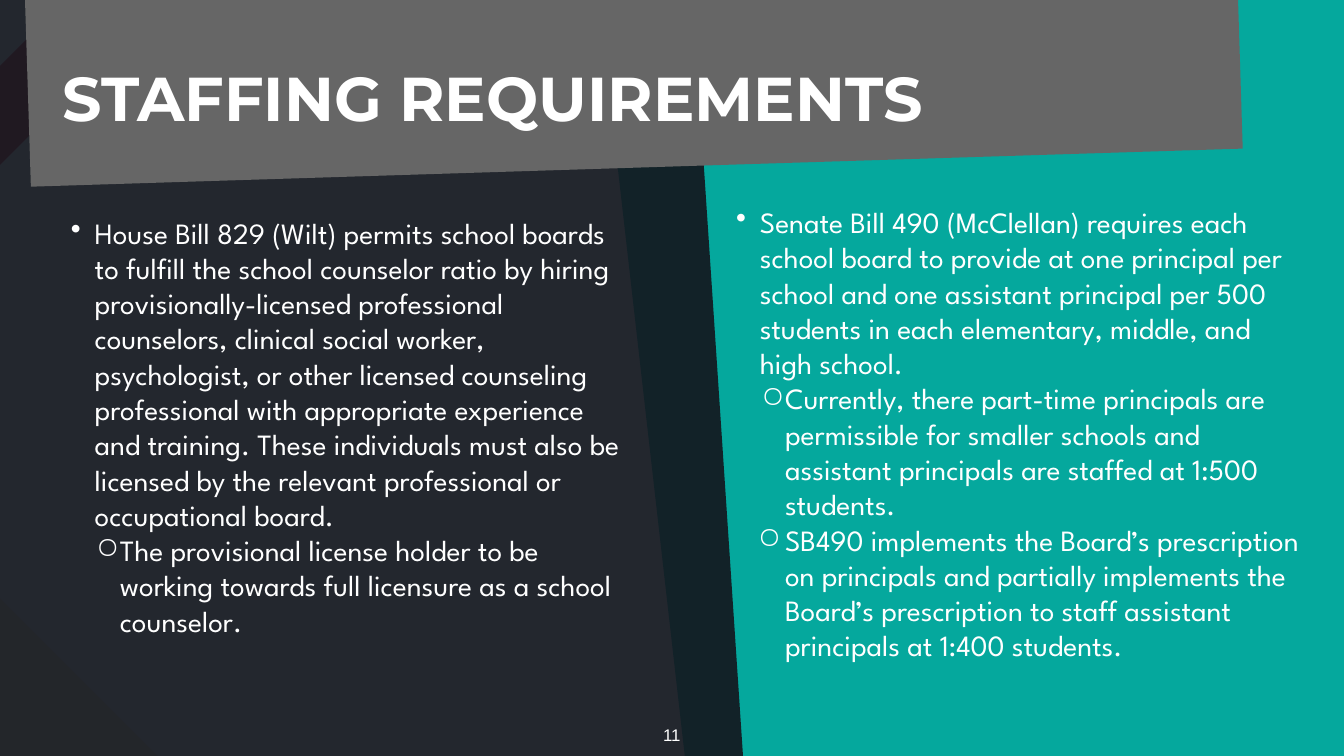
from dataclasses import dataclass

from lxml import etree
from pptx import Presentation
from pptx.dml.color import RGBColor
from pptx.enum.shapes import MSO_SHAPE
from pptx.enum.text import MSO_ANCHOR, MSO_AUTO_SIZE, PP_ALIGN
from pptx.oxml.ns import qn
from pptx.util import Inches, Pt

RECTANGLE = MSO_SHAPE.RECTANGLE
ROUNDED = MSO_SHAPE.ROUNDED_RECTANGLE
TOP, BOTTOM = MSO_ANCHOR.TOP, MSO_ANCHOR.BOTTOM
FIT_SHAPE = MSO_AUTO_SIZE.SHAPE_TO_FIT_TEXT
LEFT, CENTER = PP_ALIGN.LEFT, PP_ALIGN.CENTER
BULLETS = ("•", "○")


@dataclass(frozen=True)
class Theme:
    background: str = "EFEFEF"
    red: str = "C92D3A"
    cream: str = "ECE4B8"
    pale: str = "D5D5D5"
    teal: str = "05A89D"
    dark: str = "141820"
    gray: str = "666666"
    text: str = "FFFFFF"
    title_font: str = "Montserrat"
    body_font: str = "League Spartan"
    number_font: str = "Arial"
    title_size: float = 88.4
    body_size: float = 42
    number_size: float = 24


class SlideBuilder:
    def __init__(self, slide, theme):
        self.slide = slide
        self.theme = theme
        fill = slide.background.fill
        fill.solid()
        fill.fore_color.rgb = RGBColor.from_string(theme.background)

    def panel(self, box, rotation, color, opacity=100, kind=RECTANGLE):
        panel = self.slide.shapes.add_shape(kind, *map(Inches, box))
        panel.rotation = rotation
        panel.shadow.inherit = False
        panel.line.fill.background()
        panel.fill.solid()
        panel.fill.fore_color.rgb = RGBColor.from_string(color)
        if opacity < 100:
            tint = panel.fill._xPr.find(f".//{qn('a:srgbClr')}")
            etree.SubElement(tint, qn("a:alpha"), val=str(opacity * 1000))
        return panel

    def text_frame(self, box, inset, anchor=TOP):
        frame = self.slide.shapes.add_textbox(*map(Inches, box)).text_frame
        frame.word_wrap = True
        frame.vertical_anchor = anchor
        frame.margin_left = frame.margin_right = Inches(inset)
        frame.margin_top = frame.margin_bottom = Inches(inset)
        return frame

    def style(self, paragraph, font, size, bold=False, align=LEFT):
        paragraph.alignment = align
        paragraph.font.name = font
        paragraph.font.size = Pt(size)
        paragraph.font.bold = bold
        paragraph.font.color.rgb = RGBColor.from_string(self.theme.text)

    def title(self, box, wording):
        paragraph = self.text_frame(box, 0.06, BOTTOM).paragraphs[0]
        paragraph.text = wording
        paragraph.line_spacing = 0.8
        self.style(paragraph, self.theme.title_font, self.theme.title_size, bold=True)

    def bullet_list(self, box, items):
        frame = self.text_frame(box, 0.1)
        for index, (level, hanging, wording) in enumerate(items):
            paragraph = frame.add_paragraph() if index else frame.paragraphs[0]
            paragraph.text = wording
            paragraph.level = level
            self.style(paragraph, self.theme.body_font, self.theme.body_size)
            self.bullet(paragraph, level, hanging)

    def bullet(self, paragraph, level, hanging):
        properties = paragraph._p.get_or_add_pPr()
        properties.set("marL", str(Inches(0.5 * (level + 1))))
        properties.set("indent", str(-Inches(hanging)))
        color = etree.Element(qn("a:buClr"))
        etree.SubElement(color, qn("a:srgbClr"), val=self.theme.text)
        mark = etree.Element(qn("a:buChar"), char=BULLETS[level])
        properties.insert(0, color)
        properties.insert(1, mark)

    def page_number(self, box, number):
        frame = self.text_frame(box, 0.06)
        frame.auto_size = FIT_SHAPE
        frame.text = str(number)
        self.style(frame.paragraphs[0], self.theme.number_font,
                   self.theme.number_size, align=CENTER)


HOUSE_BILL = [
    (0, 0.47, "House Bill 829 (Wilt) permits school boards to fulfill the school "
     "counselor ratio by hiring provisionally-licensed professional counselors, "
     "clinical social worker, psychologist, or other licensed counseling "
     "professional with appropriate experience and training. These individuals "
     "must also be licensed by the relevant professional or occupational board."),
    (1, 0.47, "The provisional license holder to be working towards full licensure "
     "as a school counselor."),
]
SENATE_BILL = [
    (0, 0.47, "Senate Bill 490 (McClellan) requires each school board to provide at "
     "one principal per school and one assistant principal per 500 students in "
     "each elementary, middle, and high school."),
    (1, 0.47, "Currently, there part-time principals are permissible for smaller "
     "schools and assistant principals are staffed at 1:500 students."),
    (1, 0.54, "SB490 implements the Board’s prescription on principals and partially "
     "implements the Board’s prescription to staff assistant principals at 1:400 "
     "students."),
]


def main():
    presentation = Presentation()
    presentation.slide_width = Inches(26.67)
    presentation.slide_height = Inches(15)
    theme = Theme()
    blank = presentation.slide_layouts[6]
    builder = SlideBuilder(presentation.slides.add_slide(blank), theme)

    builder.panel((-2.21, -0.03, 7.67, 1.39), 315, theme.red)
    builder.panel((-2.62, 12.77, 5.83, 2.92), 225, theme.cream)
    glow = builder.panel((-12.39, 1.03, 13.14, 21.39), 315, theme.pale, 6, ROUNDED)
    glow.adjustments[0] = 0.289
    builder.panel((12.61, -5.05, 15.83, 22.02), 353.5, theme.teal)
    builder.panel((-3.88, -1.86, 18.15, 20.04), 356.2, theme.dark, 93)
    builder.panel((0.37, -11.76, 24.06, 15.09), 358.2, theme.gray)

    builder.title((1.18, 0.26, 24.03, 2.44), "STAFFING REQUIREMENTS")
    builder.bullet_list((14.48, 3.95, 11.59, 10.48), SENATE_BILL)
    builder.bullet_list((1.28, 4.16, 11.35, 10.48), HOUSE_BILL)
    builder.page_number((13.08, 14.31, 0.5, 0.52), 11)

    presentation.save("out.pptx")


if __name__ == "__main__":
    main()
